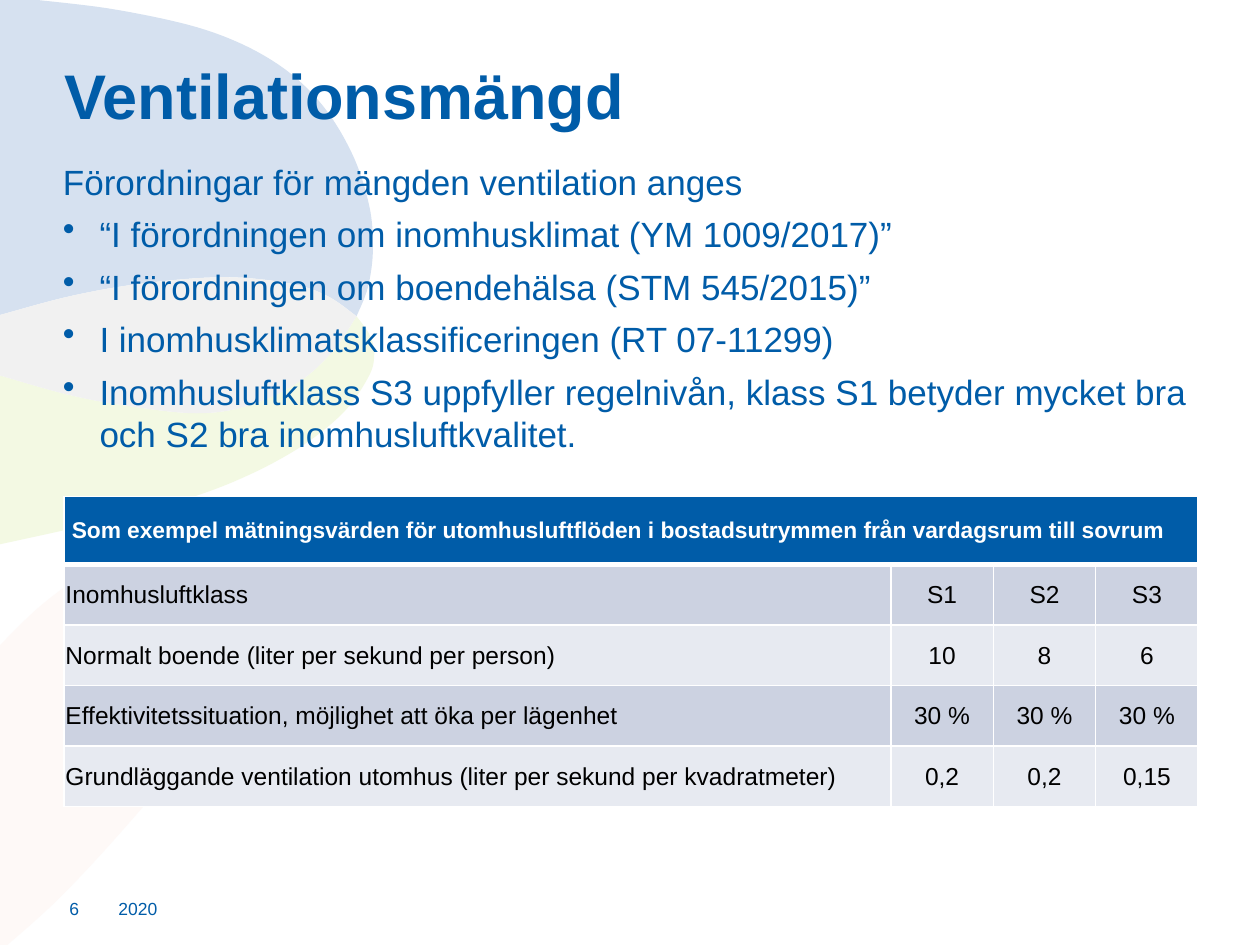
from pptx import Presentation
from pptx import util as u
from pptx.dml.color import RGBColor
from pptx.enum import text
from pptx.oxml.ns import qn
from lxml import etree

COLORS = {
    "blue": "005CA8", "white": "FFFFFF", "black": "000000",
    "band_dark": "CCD2E1", "band_light": "E7EAF1",
    "petal_pink": "FEF9F7", "petal_green": "F3F9E3",
    "petal_blue": "D6E1F0", "petal_overlap": "F1F1F1",
}
FONT = "Arial"
COLUMNS, ROWS = 100, 75
CELL = u.Inches(0.1)

# Curves through grid points; neighbouring petals share an edge.
BLUE_EDGE = [(3, 0), (9.4, 0.8), (16.4, 2.4), (21.6, 4.8), (25.3, 8), (27.9, 12.1),
             (29.3, 16.3), (29.6, 19.8), (29.2, 22.8), (28.3, 25.1)]
OVERLAP_TOP = [(0, 25), (5.6, 23.5), (11.3, 22.5), (17.8, 22), (23, 22.5), (26, 23.5),
               (28.3, 25.1)]
OVERLAP_BOTTOM = [(28.3, 25.1), (26.4, 27.9), (23.6, 30.4), (19.7, 32.2), (15.6, 32.8),
                  (10, 32.2), (5.3, 31.3), (0, 29.8)]
GREEN_EDGE = [(28.3, 25.1), (29.4, 26.7), (29.7, 28.3), (29.2, 30), (27.2, 32.8),
              (23.5, 35.7), (18.4, 38.3), (12.8, 40.2), (5.9, 41.9), (0, 43.2)]
PINK_EDGE = [(0, 51.2), (3.2, 48.1), (6.7, 45.6), (10.6, 44), (13.9, 43.5), (16.9, 44),
             (19.4, 45.4), (20.6, 47.5), (20.5, 50.3), (18.9, 53.9), (15.6, 58.9),
             (10, 65.6), (4.8, 71.2), (0.6, 75)]

TITLE = "Ventilationsmängd"
INTRO = "Förordningar för mängden ventilation anges"
BULLETS = [
    "“I förordningen om inomhusklimat (YM 1009/2017)”",
    "“I förordningen om boendehälsa (STM 545/2015)”",
    "I inomhusklimatsklassificeringen (RT 07-11299)",
    "Inomhusluftklass S3 uppfyller regelnivån, klass S1 betyder mycket bra "
    "och S2 bra inomhusluftkvalitet.",
]
TABLE_HEADING = ("Som exempel mätningsvärden för utomhusluftflöden i bostadsutrymmen "
                 "från vardagsrum till sovrum")
TABLE_ROWS = [
    ("Inomhusluftklass", "S1", "S2", "S3"),
    ("Normalt boende (liter per sekund per person)", "10", "8", "6"),
    ("Effektivitetssituation, möjlighet att öka per lägenhet", "30 %", "30 %", "30 %"),
    ("Grundläggande ventilation utomhus (liter per sekund per kvadratmeter)",
     "0,2", "0,2", "0,15"),
]


def color(name):
    return RGBColor.from_string(COLORS[name])


def grid(*lengths):
    return [u.Emu(round(length * CELL)) for length in lengths]


def style(paragraph, size, color_name, bold=False):
    font = paragraph.font
    font.name, font.size, font.bold = FONT, u.Pt(size), bold
    font.color.rgb = color(color_name)


def smooth(points, steps=8):
    """Catmull-Rom curve through the points, as a list of short chords."""
    padded = [points[0], *points, points[-1]]
    curve = [points[0]]
    for a, b, c, d in zip(padded, padded[1:], padded[2:], padded[3:]):
        for step in range(1, steps + 1):
            t = step / steps
            curve.append(tuple(
                (2 * q + (r - p) * t + (2 * p - 5 * q + 4 * r - s) * t ** 2
                 + (3 * q - p - 3 * r + s) * t ** 3) / 2
                for p, q, r, s in zip(a, b, c, d)))
    return curve


def add_petals(slide, box):
    left, top, _, height = box
    overlap_top, overlap_bottom = smooth(OVERLAP_TOP), smooth(OVERLAP_BOTTOM)
    petals = [
        ("petal_pink", smooth(PINK_EDGE) + [(0, height)]),
        ("petal_green", smooth(GREEN_EDGE) + overlap_bottom[::-1]),
        ("petal_blue", [(0, 0)] + smooth(BLUE_EDGE) + overlap_top[::-1]),
        ("petal_overlap", overlap_top + overlap_bottom),
    ]
    for color_name, outline in petals:
        points = [grid(left + x, top + y) for x, y in outline]
        builder = slide.shapes.build_freeform(*points[0])
        builder.add_line_segments(points[1:], close=True)
        shape = builder.convert_to_shape()
        shape.shadow.inherit = False
        shape.fill.solid()
        shape.fill.fore_color.rgb = color(color_name)
        shape.line.fill.background()


def add_text(slide, box, lines, size, bold=False, anchor=text.MSO_ANCHOR.TOP):
    frame = slide.shapes.add_textbox(*grid(*box)).text_frame
    frame.word_wrap = True
    frame.vertical_anchor = anchor
    frame.margin_left = frame.margin_right = frame.margin_top = frame.margin_bottom = 0
    frame.text = "\n".join(lines)
    for paragraph in frame.paragraphs:
        style(paragraph, size, "blue", bold)
    return frame


def add_title(slide, box):
    frame = add_text(slide, box, [TITLE], 36, bold=True)
    frame.paragraphs[0].line_spacing = 0.9


def add_body(slide, box):
    frame = add_text(slide, box, [INTRO, *BULLETS], 20)
    indent, = grid(2.9)
    for paragraph in frame.paragraphs[1:]:
        paragraph.space_before = u.Pt(6)
        properties = paragraph._p.get_or_add_pPr()
        properties.set("marL", str(indent))
        properties.set("indent", str(-indent))
        bullet = etree.Element(qn("a:buChar"), char="•")
        properties.find(qn("a:defRPr")).addprevious(bullet)


def set_borders(cell, bottom=1):
    properties = cell._tc.get_or_add_tcPr()
    widths = [("L", 1), ("R", 1), ("T", 1), ("B", bottom)]
    for position, (side, width) in enumerate(widths):
        line = etree.Element(qn(f"a:ln{side}"), w=str(u.Pt(width)))
        fill = etree.SubElement(line, qn("a:solidFill"))
        etree.SubElement(fill, qn("a:srgbClr"), val=COLORS["white"])
        properties.insert(position, line)


def fill_cell(cell, words, fill, size, color_name, bold=False, centred=False):
    cell.fill.solid()
    cell.fill.fore_color.rgb = color(fill)
    cell.vertical_anchor = text.MSO_ANCHOR.MIDDLE
    cell.margin_left, cell.margin_right, cell.margin_top, cell.margin_bottom = grid(
        0.1, 0.1, 0.1, 0)
    cell.text = words
    paragraph = cell.text_frame.paragraphs[0]
    paragraph.alignment = text.PP_ALIGN.CENTER if centred else text.PP_ALIGN.LEFT
    style(paragraph, size, color_name, bold)


def add_airflow_table(slide, box):
    width, height = box[2:]
    value_width, heading_height = 8.13, 5.4
    table = slide.shapes.add_table(len(TABLE_ROWS) + 1, 4, *grid(*box)).table
    widths = [width - 3 * value_width] + [value_width] * 3
    for column, column_width in zip(table.columns, grid(*widths)):
        column.width = column_width
    row_height = (height - heading_height) / len(TABLE_ROWS)
    heights = [heading_height] + [row_height] * len(TABLE_ROWS)
    for row, size in zip(table.rows, grid(*heights)):
        row.height = size

    heading = table.cell(0, 0)
    heading.merge(table.cell(0, 3))
    fill_cell(heading, TABLE_HEADING, "blue", 13, "white", bold=True)
    heading.margin_left, = grid(0.6)
    for cell in table.rows[0].cells:
        set_borders(cell, bottom=3)

    for index, values in enumerate(TABLE_ROWS):
        band = "band_light" if index % 2 else "band_dark"
        for column, words in enumerate(values):
            cell = table.cell(index + 1, column)
            fill_cell(cell, words, band, 14, "black", centred=column > 0)
            set_borders(cell)


def add_footer(slide, box):
    left, top, width, height = box
    number_width = 3.9
    middle = text.MSO_ANCHOR.MIDDLE
    add_text(slide, (left, top, number_width, height), ["6"], 10, anchor=middle)
    add_text(slide, (left + number_width, top, width - number_width, height),
             ["2020"], 10, anchor=middle)


def main():
    presentation = Presentation()
    presentation.slide_width, presentation.slide_height = grid(COLUMNS, ROWS)
    slide = presentation.slides.add_slide(presentation.slide_layouts[6])
    add_petals(slide, (0, 0, COLUMNS, ROWS))
    add_title(slide, (5.1, 5.2, 90, 6.7))
    add_body(slide, (5, 12.7, 90, 25.9))
    add_airflow_table(slide, (5.1, 39.4, 90, 24.6))
    add_footer(slide, (5.5, 71.3, 13.3, 1.6))
    presentation.save("out.pptx")


if __name__ == "__main__":
    main()
